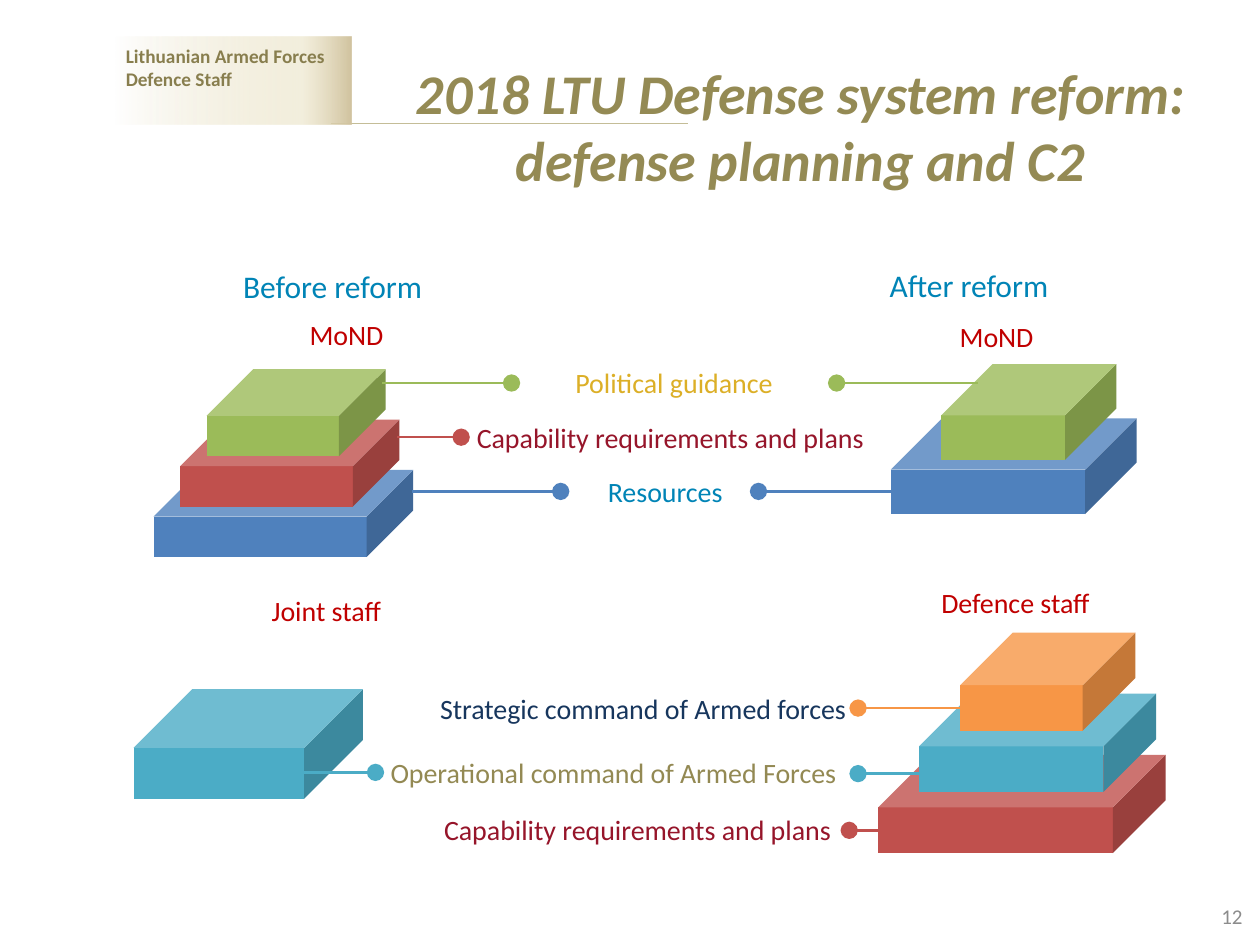
from lxml.etree import SubElement
from pptx import Presentation
from pptx.dml.color import RGBColor
from pptx.enum.shapes import MSO_CONNECTOR, MSO_SHAPE
from pptx.enum.text import MSO_ANCHOR, PP_ALIGN
from pptx.oxml.ns import qn
from pptx.util import Inches, Pt

GREEN, RED, BLUE = "9BBB59", "C0504D", "4F81BD"
TEAL, ORANGE = "4BACC6", "F79646"
HEADING, WINE, SKY = "C00000", "96152A", "0084B6"


def rgb(color):
    return RGBColor.from_string(color)


def add_text(s, box, lines, color, size=16, align=PP_ALIGN.CENTER,
             anchor=MSO_ANCHOR.TOP, **extra):
    tf = s.shapes.add_textbox(*map(Inches, box)).text_frame
    tf.word_wrap = True
    tf.vertical_anchor = anchor
    formats = {"name": "Calibri", "size": Pt(size), **extra}
    tf.text = lines
    for p in tf.paragraphs:
        p.alignment = align
        for r in p.runs:
            r.font.color.rgb = rgb(color)
            for key, value in formats.items():
                setattr(r.font, key, value)


def add_line(s, x1, x2, y, color, width=1.5, dot=True):
    line = s.shapes.add_connector(
        MSO_CONNECTOR.STRAIGHT, *map(Inches, (x1, y, x2, y)))
    line.line.color.rgb = rgb(color)
    line.line.width = Pt(width)
    if dot:
        SubElement(line.line._get_or_add_ln(), qn("a:tailEnd"),
                   type="oval", w="lg", len="lg")
    SubElement(line._element.spPr, qn("a:effectLst"))


def add_banner(s, box):
    x, y, w, h = box
    add_line(s, x + 1.71, x + 4.54, y + 0.69, "C4BD97", 0.75, dot=False)
    sp = s.shapes.add_shape(MSO_SHAPE.RECTANGLE, *map(Inches, box))
    sp.shadow.inherit = False
    sp.line.fill.background()
    sp.fill.gradient()
    sp.fill.gradient_angle = 0
    stops = sp._element.spPr.find(qn("a:gradFill")).find(qn("a:gsLst"))
    for stop in list(stops):
        stops.remove(stop)
    for pos, color, alpha in ((0, "FFFFFF", 100), (79, "E9E1C1", 54),
                              (100, "D1C39F", 100)):
        stop = SubElement(stops, qn("a:gs"), pos=str(pos * 1000))
        clr = SubElement(stop, qn("a:srgbClr"), val=color)
        SubElement(clr, qn("a:alpha"), val=str(alpha * 1000))
    add_text(s, (x - 0.02, y + 0.01, w + 0.1, 0.47),
             "Lithuanian Armed Forces\nDefence Staff", "887E4E", 11,
             PP_ALIGN.LEFT, bold=True)


def add_stack(s, box, step, tiers):
    x, y, _, h = box
    dx, dy = step
    for i, (w, color) in enumerate(tiers):
        cube = s.shapes.add_shape(MSO_SHAPE.CUBE, *map(
            Inches, (x + i * dx, y - i * dy, w, h)))
        cube.adjustments[0] = 0.536
        cube.shadow.inherit = False
        cube.fill.solid()
        cube.fill.fore_color.rgb = rgb(color)
        cube.line.fill.background()


def add_role(s, box, text, color, leaders):
    add_text(s, box, text, color)
    for x1, x2, dy, line_color in leaders:
        add_line(s, x1, x2, box[1] + dy, line_color)


def add_headings(s):
    for x, y, text in ((1.73, 2.07, "Before reform"),
                       (6.78, 2.06, "After reform")):
        add_text(s, (x, y, 1.82, 0.4), text, SKY, 18)
    for x, y, text in ((1.77, 2.47, "MoND"), (6.93, 2.49, "MoND"),
                       (1.61, 4.66, "Joint staff"),
                       (7.08, 4.6, "Defence staff")):
        add_text(s, (x, y, 1.96, 0.47), text, HEADING)


def main():
    prs = Presentation()
    prs.slide_width, prs.slide_height = Inches(10), Inches(7.5)
    s = prs.slides.add_slide(prs.slide_layouts[6])

    add_banner(s, (0.92, 0.29, 1.87, 0.7))
    add_text(s, (2.87, 0.37, 6.97, 1.25),
             "2018 LTU Defense system reform:\vdefense planning and C2",
             "948A54", 32, anchor=MSO_ANCHOR.MIDDLE, bold=True, italic=True)
    add_headings(s)

    add_stack(s, (1.22, 3.73, 2.06, 0.69), (0.21, 0.4),
              [(2.06, BLUE), (1.74, RED), (1.42, GREEN)])
    add_stack(s, (7.07, 3.32, 1.95, 0.76), (0.4, 0.43),
              [(1.95, BLUE), (1.39, GREEN)])
    add_stack(s, (1.06, 5.47, 1.82, 0.87), (0, 0), [(1.82, TEAL)])
    add_stack(s, (6.97, 5.99, 2.28, 0.78), (0.325, 0.485),
              [(2.28, RED), (1.88, TEAL), (1.39, ORANGE)])

    roles = [
        ((3.37, 2.85, 3.96, 0.37), "Political guidance", "DCAF27",
         [(3.03, 4.06, 0.19, GREEN), (7.76, 6.64, 0.19, GREEN)]),
        ((3.58, 3.29, 3.48, 0.37), "Capability requirements and plans", WINE,
         [(3.15, 3.66, 0.18, RED)]),
        ((3.58, 3.72, 3.4, 0.37), "Resources", SKY,
         [(3.27, 4.45, 0.18, BLUE), (7.07, 6.02, 0.18, BLUE)]),
        ((3.19, 5.44, 3.83, 0.37), "Strategic command of Armed forces",
         "17365D", [(7.67, 6.81, 0.18, ORANGE)]),
        ((2.88, 5.95, 3.98, 0.37), "Operational command of Armed Forces",
         "938953", [(2.24, 2.98, 0.18, TEAL), (7.44, 6.81, 0.19, TEAL)]),
        ((3.07, 6.4, 3.98, 0.37), "Capability requirements and plans", WINE,
         [(7.13, 6.74, 0.19, RED)]),
    ]
    for role in roles:
        add_role(s, *role)

    add_text(s, (9.48, 7.14, 0.48, 0.26), "12", "8C8C8C", 12,
             PP_ALIGN.RIGHT, MSO_ANCHOR.MIDDLE)
    prs.save("out.pptx")


if __name__ == "__main__":
    main()
